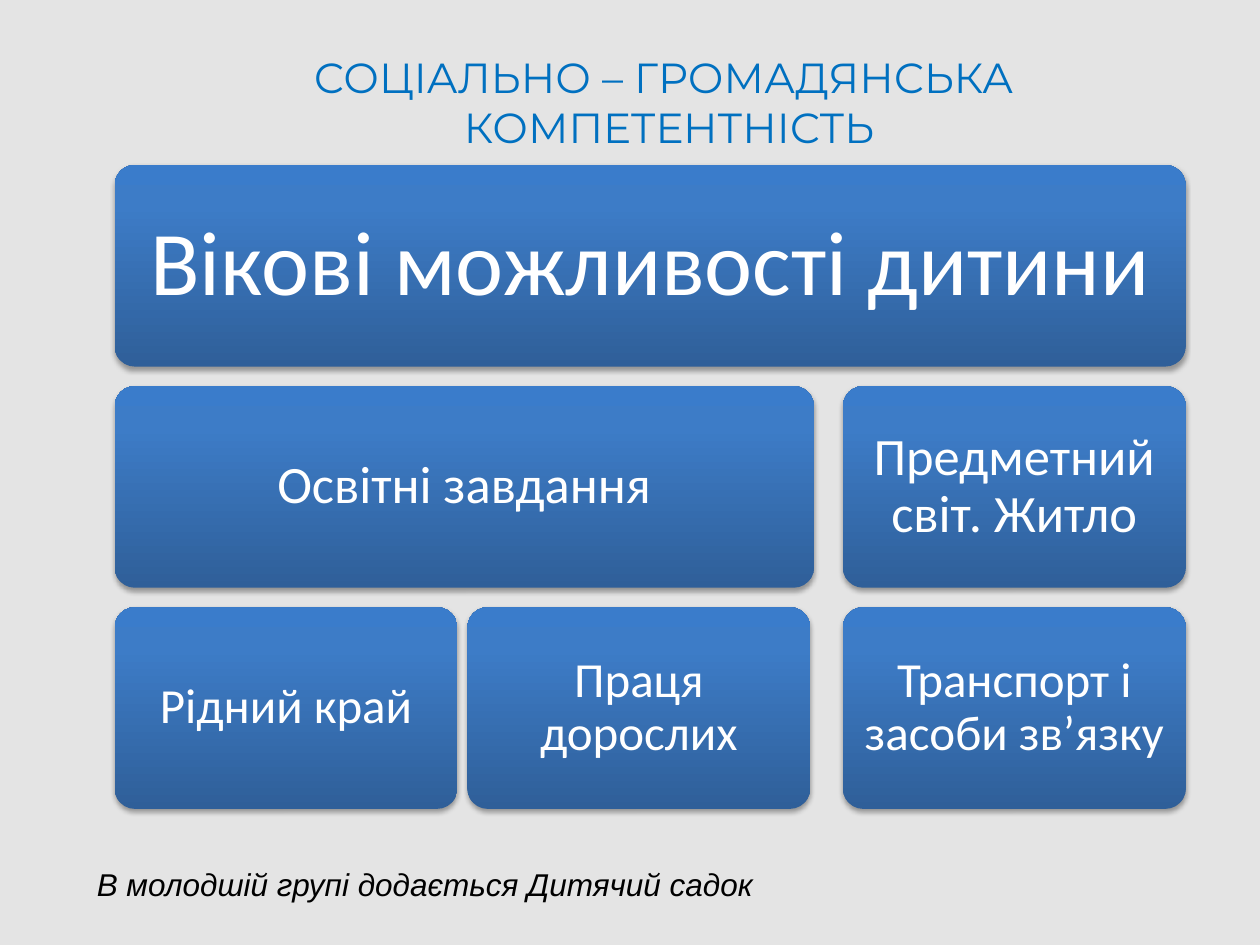
"""Build the slide on social and civic competence with its tiered blocks."""
from lxml import etree
from pptx import Presentation
from pptx.dml.color import RGBColor
from pptx.enum.shapes import MSO_SHAPE
from pptx.enum.text import MSO_ANCHOR, PP_ALIGN
from pptx.oxml import parse_xml
from pptx.util import Inches, Pt

ROUNDED = MSO_SHAPE.ROUNDED_RECTANGLE
MIDDLE = MSO_ANCHOR.MIDDLE
CENTER = PP_ALIGN.CENTER
LEFT = PP_ALIGN.LEFT
NAMESPACE = "http://schemas.openxmlformats.org/drawingml/2006/main"

TITLE = ["СОЦІАЛЬНО – ГРОМАДЯНСЬКА ", "КОМПЕТЕНТНІСТЬ"]
NOTE = ["В молодшій групі додається Дитячий садок"]
ROWS = [
    {"size": 52, "inset": 0.17, "blocks": [("Вікові можливості дитини", 0.91, 8.5)]},
    {"size": 30, "inset": 0.07, "blocks": [
        ("Освітні завдання", 0.91, 5.55),
        ("Предметний світ. Житло", 6.69, 2.72),
    ]},
    {"size": 28, "inset": 0.07, "blocks": [
        ("Рідний край", 0.91, 2.72),
        ("Праця дорослих", 3.71, 2.72),
        ("Транспорт і засоби зв’язку", 6.69, 2.72),
    ]},
]
ROW_TOP, ROW_HEIGHT, ROW_STEP = 1.31, 1.6, 1.755

THEME = {
    "background": "E4E4E4",
    "title": {"font": "Montserrat", "size": 24, "color": "0070C0"},
    "block": {"font": "Calibri", "color": "FFFFFF"},
    "note": {"font": "Arial", "size": 18, "color": "000000", "italic": True},
    "gradient": [(0, "2F5F99"), (80, "3D7CC7"), (100, "3A7CCB")],
    "shadow": {"color": "000000", "opacity": 35, "blur": 3.1, "distance": 1.8},
}


def write_text(text_frame, lines, style, alignment, spacing=1.0):
    text_frame.text = "\n".join(lines)
    for paragraph in text_frame.paragraphs:
        paragraph.alignment = alignment
        paragraph.line_spacing = spacing
        for run in paragraph.runs:
            run.font.name = style["font"]
            run.font.size = Pt(style["size"])
            run.font.italic = style.get("italic", False)
            run.font.color.rgb = RGBColor.from_string(style["color"])


def add_label(slide, box, lines, style, alignment, wrap):
    label = slide.shapes.add_textbox(*map(Inches, box))
    label.text_frame.word_wrap = wrap
    write_text(label.text_frame, lines, style, alignment)


def apply_gradient(shape):
    shape.fill.gradient()
    shape.fill.gradient_angle = 90
    stop_list = shape.element.spPr.find(f".//{{{NAMESPACE}}}gsLst")
    for stop in list(stop_list):
        stop_list.remove(stop)
    for position, color in THEME["gradient"]:
        stop = etree.SubElement(stop_list, f"{{{NAMESPACE}}}gs", pos=str(position * 1000))
        etree.SubElement(stop, f"{{{NAMESPACE}}}srgbClr", val=color)


def apply_shadow(shape):
    shadow = THEME["shadow"]
    shape.shadow.inherit = False
    effects = shape.element.spPr.find(f"{{{NAMESPACE}}}effectLst")
    effects.append(parse_xml(
        f'<a:outerShdw xmlns:a="{NAMESPACE}" blurRad="{Pt(shadow["blur"])}" '
        f'dist="{Pt(shadow["distance"])}" dir="5400000" rotWithShape="0">'
        f'<a:srgbClr val="{shadow["color"]}">'
        f'<a:alpha val="{shadow["opacity"] * 1000}"/></a:srgbClr></a:outerShdw>'
    ))


def add_block(slide, box, text, size, inset):
    shape = slide.shapes.add_shape(ROUNDED, *map(Inches, box))
    shape.adjustments[0] = 0.1
    shape.line.fill.background()
    apply_gradient(shape)
    apply_shadow(shape)
    text_frame = shape.text_frame
    text_frame.word_wrap = True
    text_frame.vertical_anchor = MIDDLE
    text_frame.margin_left = text_frame.margin_right = Inches(inset)
    text_frame.margin_top = text_frame.margin_bottom = Inches(inset)
    write_text(text_frame, [text], {**THEME["block"], "size": size}, CENTER, 0.9)


def main():
    presentation = Presentation()
    presentation.slide_width, presentation.slide_height = Inches(10), Inches(7.5)
    slide = presentation.slides.add_slide(presentation.slide_layouts[6])
    background = slide.background.fill
    background.solid()
    background.fore_color.rgb = RGBColor.from_string(THEME["background"])

    add_label(slide, (2.21, 0.36, 6.2, 0.91), TITLE, THEME["title"], CENTER, False)
    for index, row in enumerate(ROWS):
        top = ROW_TOP + index * ROW_STEP
        for text, left, width in row["blocks"]:
            add_block(slide, (left, top, width, ROW_HEIGHT), text, row["size"], row["inset"])
    add_label(slide, (0.67, 6.82, 5.43, 0.4), NOTE, THEME["note"], LEFT, True)
    presentation.save("out.pptx")


if __name__ == "__main__":
    main()
